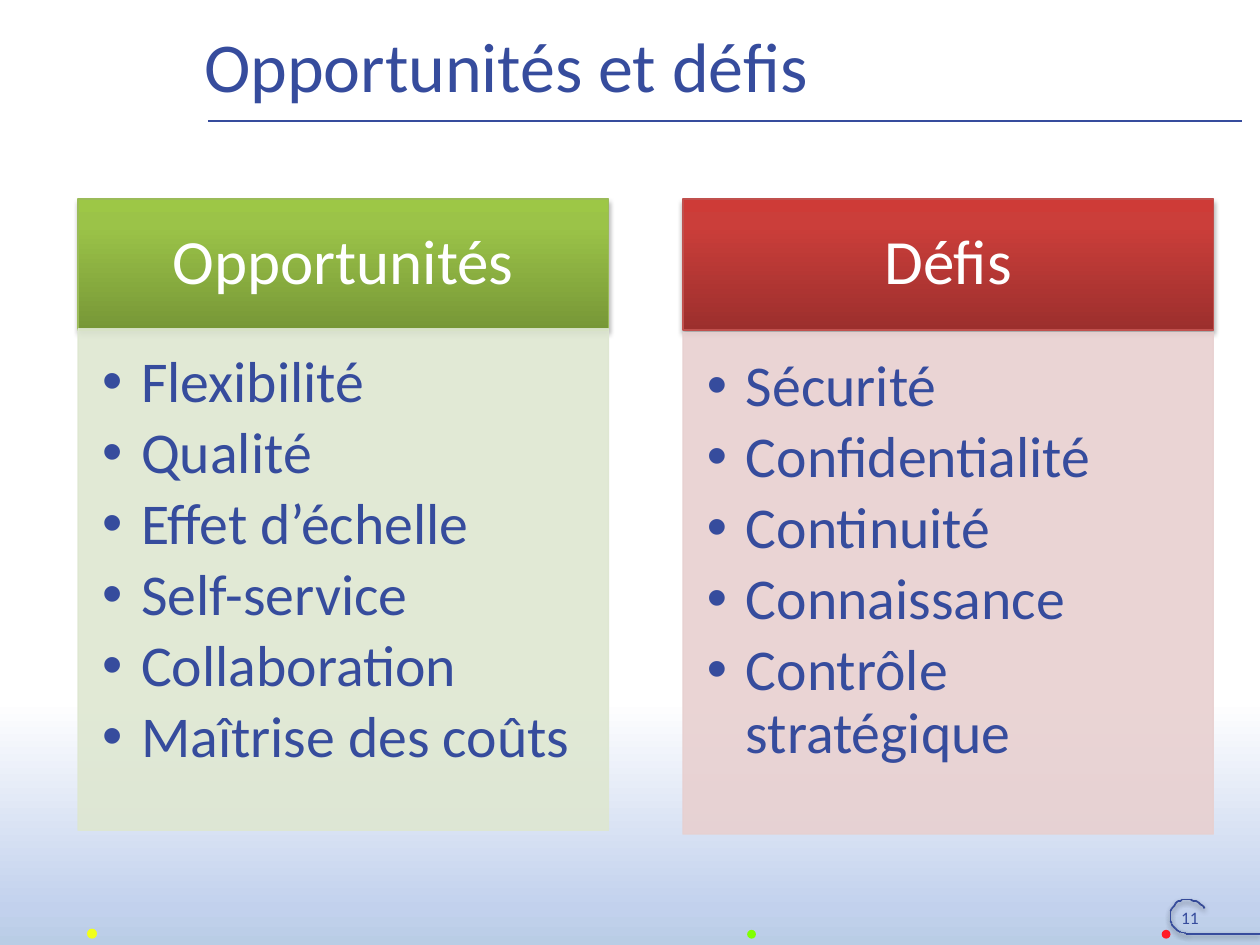
from itertools import pairwise

from lxml import etree
from pptx import Presentation
from pptx.dml.color import RGBColor
from pptx.enum.shapes import MSO_CONNECTOR, MSO_SHAPE
from pptx.enum.text import MSO_ANCHOR, MSO_AUTO_SIZE, PP_ALIGN
from pptx.oxml import parse_xml
from pptx.oxml.ns import nsdecls, qn
from pptx.util import Inches, Pt

RECTANGLE, OVAL = MSO_SHAPE.RECTANGLE, MSO_SHAPE.OVAL
STRAIGHT = MSO_CONNECTOR.STRAIGHT
TOP, MIDDLE = MSO_ANCHOR.TOP, MSO_ANCHOR.MIDDLE
LEFT, CENTER = PP_ALIGN.LEFT, PP_ALIGN.CENTER
FONT, BULLET_FONT = "Calibri", "Arial"
COLORS = {"ink": "364C9D", "white": "FFFFFF", "yellow": "F2FF1A",
          "green": "80FF00", "red": "FF1A26"}

# Content
TITLE = "Opportunités et défis"
PAGE_NUMBER = "11"
COLUMNS = [
    {"heading": "Opportunités", "left": 0.62, "panel_top": 2.61,
     "items": ["Flexibilité", "Qualité", "Effet d’échelle", "Self-service",
               "Collaboration", "Maîtrise des coûts"],
     "gradient": [(0, "779737"), (80, "9BC348"), (100, "9DC746")],
     "border": "9BBB59", "panel": "DEE7D1"},
    {"heading": "Défis", "left": 5.42, "panel_top": 2.64,
     "items": ["Sécurité", "Confidentialité", "Continuité", "Connaissance",
               "Contrôle stratégique"],
     "gradient": [(0, "9C2F2D"), (80, "CB3E3A"), (100, "CE3B37")],
     "border": "C0504D", "panel": "E8D0D0"},
]
BAND_GRADIENT = [(0, "B9CDE5"), (15, "C2D1ED"), (100, "FFFFFF")]
DOTS = [("red", 9.22, 7.38, 0.07), ("green", 5.93, 7.38, 0.07),
        ("yellow", 0.69, 7.37, 0.08)]
CURL = [(9.56, 7.21), (9.55, 7.19), (9.53, 7.18), (9.51, 7.16), (9.49, 7.15),
        (9.47, 7.15), (9.45, 7.14), (9.44, 7.14), (9.42, 7.14), (9.4, 7.14),
        (9.38, 7.14), (9.37, 7.15), (9.35, 7.15), (9.34, 7.16), (9.33, 7.17),
        (9.32, 7.19), (9.31, 7.2), (9.3, 7.21), (9.29, 7.23), (9.29, 7.24),
        (9.29, 7.26), (9.29, 7.28), (9.29, 7.3), (9.29, 7.31), (9.3, 7.33),
        (9.3, 7.34), (9.31, 7.35), (9.32, 7.36), (9.33, 7.37), (9.34, 7.38),
        (9.35, 7.39), (9.36, 7.39), (9.37, 7.4), (9.38, 7.4), (9.39, 7.4),
        (9.4, 7.4), (9.41, 7.41), (9.42, 7.41), (9.43, 7.41), (10, 7.41)]
COLUMN_WIDTH, HEADER_TOP, HEADER_HEIGHT, PANEL_HEIGHT = 4.21, 1.58, 1.04, 3.98


def rgb(value):
    return RGBColor.from_string(value)


def place(shape, left, top, width, height):
    shape.left, shape.top = Inches(left), Inches(top)
    shape.width, shape.height = Inches(width), Inches(height)


def write(shape, text, size=10, color="ink", align=LEFT, anchor=TOP,
          insets=(0, 0, 0, 0), spacing=1, after=0, bullet=False):
    """Fill a shape with one paragraph per line of text."""
    frame = shape.text_frame
    frame.text = text
    frame.word_wrap = True
    frame.auto_size = MSO_AUTO_SIZE.NONE
    frame.vertical_anchor = anchor
    (frame.margin_left, frame.margin_top,
     frame.margin_right, frame.margin_bottom) = map(Inches, insets)
    for para in frame.paragraphs:
        para.alignment, para.line_spacing = align, spacing
        para.space_before, para.space_after = Pt(0), Pt(after)
        if bullet:
            para.level = 1
            properties = para._p.get_or_add_pPr()
            properties.set("marL", str(Inches(0.31)))
            properties.set("indent", str(Inches(-0.31)))
            etree.SubElement(properties, qn("a:buFont")).set("typeface", BULLET_FONT)
            etree.SubElement(properties, qn("a:buChar")).set("char", "•")
        for span in para.runs:
            span.font.name, span.font.size = FONT, Pt(size)
            span.font.color.rgb = rgb(COLORS[color])


def set_gradient(shape, stops):
    """Blend the stops from the bottom edge to the top edge."""
    marks = "".join(f'<a:gs pos="{position * 1000}"><a:srgbClr val="{color}"/></a:gs>'
                    for position, color in stops)
    shape.fill.background()
    empty = shape.element.spPr.find(qn("a:noFill"))
    empty.getparent().replace(empty, parse_xml(
        f'<a:gradFill {nsdecls("a")} rotWithShape="1"><a:gsLst>{marks}</a:gsLst>'
        '<a:lin ang="16200000" scaled="0"/></a:gradFill>'))


def set_shadow(shape, opacity, distance):
    effects = etree.SubElement(shape.element.spPr, qn("a:effectLst"))
    effects.append(parse_xml(
        f'<a:outerShdw {nsdecls("a")} blurRad="{Pt(3.1)}" dist="{Pt(distance)}" '
        'dir="5400000" rotWithShape="0"><a:srgbClr val="000000">'
        f'<a:alpha val="{opacity * 1000}"/></a:srgbClr></a:outerShdw>'))


def set_line(shape, color, width):
    shape.line.color.rgb = rgb(color)
    shape.line.width = Pt(width)


def draw_line(parent, start, end, width):
    line = parent.add_connector(STRAIGHT, *map(Inches, start + end))
    set_line(line, COLORS["ink"], width)
    return line


deck = Presentation()
deck.slide_width, deck.slide_height = Inches(10), Inches(7.5)
page = deck.slides.add_slide(deck.slide_layouts[3])
shapes = page.shapes
title, *bodies = page.placeholders

# Blue band behind everything
band = shapes.add_shape(RECTANGLE, 0, Inches(5.56), Inches(10), Inches(1.94))
band.shadow.inherit = False
band.line.fill.background()
set_gradient(band, BAND_GRADIENT)
title.element.addprevious(band.element)

# Title and rule
place(title, 1.62, 0.15, 8.24, 0.72)
write(title, TITLE, size=40, anchor=MIDDLE, insets=(0, 0.05, 0.1, 0.05))
rule = draw_line(shapes, (1.65, 0.96), (9.86, 0.96), 1.5)
etree.SubElement(rule.element.spPr, qn("a:effectLst"))

# Footer dots
for color, left, top, size in DOTS:
    dot = shapes.add_shape(OVAL, Inches(left), Inches(top), Inches(size), Inches(size))
    dot.shadow.inherit = False
    dot.fill.solid()
    dot.fill.fore_color.rgb = rgb(COLORS[color])
    dot.line.fill.background()

# Curl around the page number
curl = shapes.add_group_shape()
for start, end in pairwise(CURL):
    set_shadow(draw_line(curl.shapes, start, end, 1), opacity=38, distance=1.6)
number = shapes.add_textbox(Inches(9.15), Inches(7.15), Inches(0.53), Inches(0.24))
write(number, PAGE_NUMBER, align=CENTER, insets=(0.1, 0.05, 0.04, 0))

# Columns: list panel in front of its heading
for column, panel in zip(COLUMNS, bodies):
    place(panel, column["left"], column["panel_top"], COLUMN_WIDTH, PANEL_HEIGHT)
    panel.fill.solid()
    panel.fill.fore_color.rgb = rgb(column["panel"])
    set_line(panel, column["panel"], 0.75)
    for tint in panel.element.spPr.iter(qn("a:srgbClr")):
        etree.SubElement(tint, qn("a:alpha")).set("val", "90000")
    write(panel, "\n".join(column["items"]), size=33, spacing=0.9, after=4.95,
          insets=(0.19, 0.19, 0.26, 0.29), bullet=True)

    header = shapes.add_shape(RECTANGLE, 0, 0, 0, 0)
    place(header, column["left"], HEADER_TOP, COLUMN_WIDTH, HEADER_HEIGHT)
    set_gradient(header, column["gradient"])
    set_line(header, column["border"], 0.75)
    set_shadow(header, opacity=35, distance=1.8)
    write(header, column["heading"], size=36, color="white", align=CENTER,
          anchor=MIDDLE, insets=(0.28, 0.16, 0.28, 0.16), spacing=0.9)
    panel.element.addprevious(header.element)

deck.save("out.pptx")
